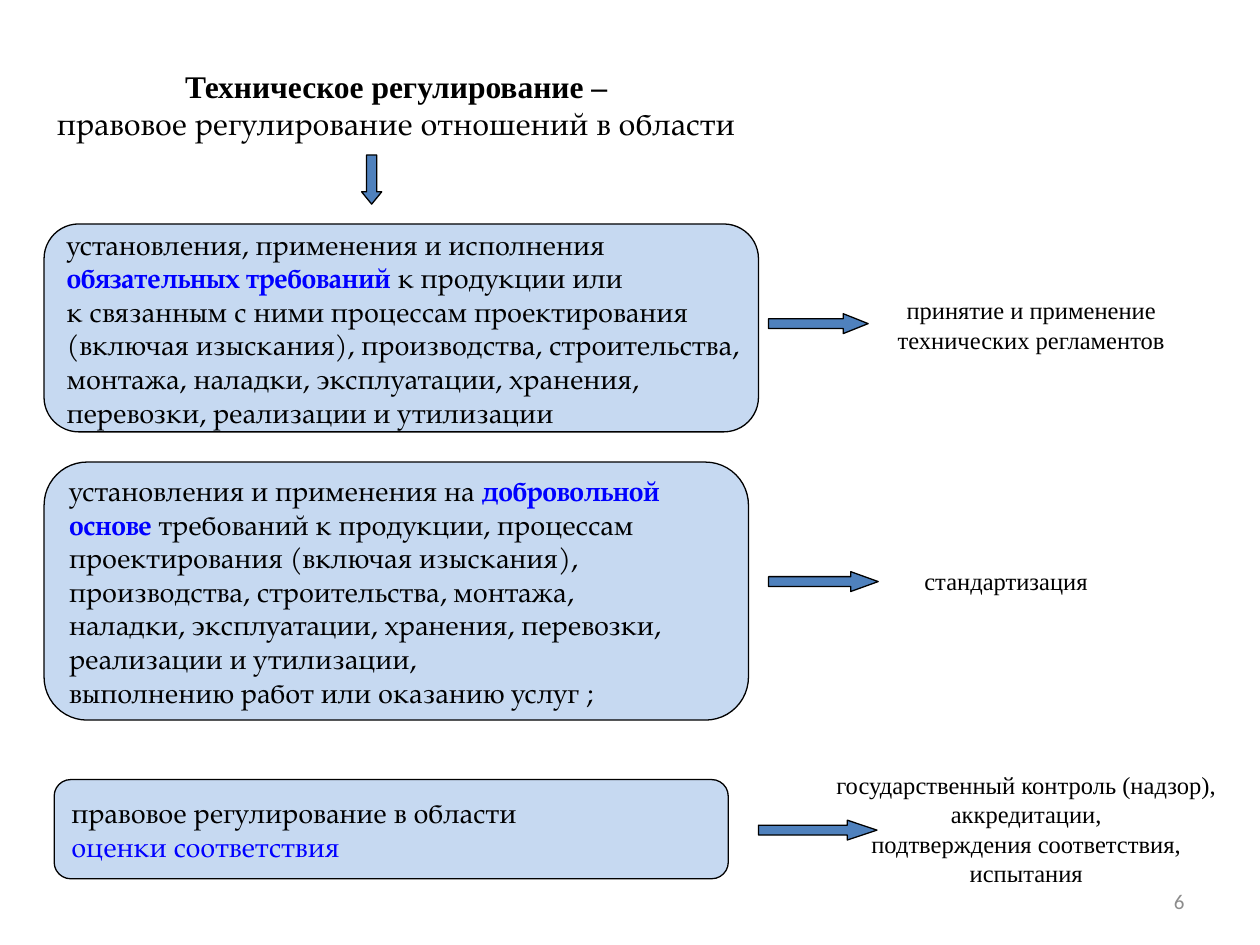
from pptx import Presentation
from pptx.dml.color import RGBColor
from pptx.enum.shapes import MSO_SHAPE as SHAPE
from pptx.enum.text import MSO_ANCHOR as ANCHOR, MSO_AUTO_SIZE as AUTO_SIZE, PP_ALIGN as ALIGN
from pptx.util import Inches, Pt

BLACK = RGBColor(0x00, 0x00, 0x00)
ACCENT = RGBColor(0x00, 0x00, 0xFF)
BOX_FILL = RGBColor(0xC6, 0xD9, 0xF1)
ARROW_FILL = RGBColor(0x4F, 0x81, 0xBD)
GREY = RGBColor(0x8C, 0x8C, 0x8C)
SERIF = "Times New Roman"
BOOK = "TeX Gyre Pagella"
WIDTH, HEIGHT = Inches(10), Inches(7.5)

KEY = {"color": ACCENT, "bold": True}

# Each item: left, top, width, height as percentages of the slide, then content.
# A line is a string or a list of (text, format) runs.
BOXES = [
    ((3.5, 23.7, 56.7, 22), [
        "установления, применения и исполнения",
        [("обязательных требований", KEY), (" к продукции или", {})],
        "к связанным с ними процессам проектирования",
        "(включая изыскания), производства, строительства,",
        "монтажа, наладки, эксплуатации, хранения,",
        "перевозки, реализации и утилизации",
    ]),
    ((3.5, 48.9, 55.9, 27.3), [
        [("установления и применения на ", {}), ("добровольной", KEY)],
        [("основе", KEY), (" требований к продукции, процессам", {})],
        "проектирования (включая изыскания),",
        "производства, строительства, монтажа,",
        "наладки, эксплуатации, хранения, перевозки,",
        "реализации и утилизации,",
        "выполнению работ или оказанию услуг ;",
    ]),
    ((4.3, 82.5, 53.5, 10.5), [
        "правовое регулирование в области",
        [("оценки соответствия", {"color": ACCENT})],
    ]),
]
LABELS = [
    ((67.3, 29.1, 29.1, 10.5), ["принятие и применение", "технических регламентов"]),
    ((65.7, 57.3, 28.3, 8.4), ["стандартизация"]),
    ((65.7, 79.3, 31.5, 16.8), ["государственный контроль (надзор),", "аккредитации,",
                                "подтверждения соответствия,", "испытания"]),
]
ARROWS = [
    (SHAPE.DOWN_ARROW, (28.7, 16.4, 1.6, 5.2)),
    (SHAPE.RIGHT_ARROW, (61, 33.2, 7.9, 2.1)),
    (SHAPE.RIGHT_ARROW, (61, 60.5, 8.7, 2.1)),
    (SHAPE.RIGHT_ARROW, (60.2, 86.8, 9.4, 2.1)),
]


def share(area):
    """Turn percentages of the slide into left, top, width, height."""
    return [int(part * side / 100) for part, side in zip(area, (WIDTH, HEIGHT) * 2)]


def write(tf, lines, font=BOOK, size=16, align=ALIGN.JUSTIFY, color=BLACK, bold=False):
    tf.auto_size = AUTO_SIZE.NONE
    tf.word_wrap = False
    tf.vertical_anchor = ANCHOR.MIDDLE
    for i, line in enumerate(lines):
        p = tf.paragraphs[0] if i == 0 else tf.add_paragraph()
        p.alignment = align
        for text, own in [(line, {})] if isinstance(line, str) else line:
            style = {"font": font, "color": color, "bold": bold, **own}
            r = p.add_run()
            r.text = text
            r.font.name = style["font"]
            r.font.size = Pt(size)
            r.font.bold = style["bold"]
            r.font.color.rgb = style["color"]


def add_filled(slide, kind, area, fill):
    sp = slide.shapes.add_shape(kind, *share(area))
    sp.shadow.inherit = False
    sp.fill.solid()
    sp.fill.fore_color.rgb = fill
    sp.line.color.rgb = BLACK
    sp.line.width = Pt(0.75)
    return sp


def add_box(slide, area, lines):
    sp = add_filled(slide, SHAPE.ROUNDED_RECTANGLE, area, BOX_FILL)
    write(sp.text_frame, lines)


def add_arrow(slide, kind, area):
    """Add a block arrow whose head takes a quarter of its length."""
    sp = add_filled(slide, kind, area, ARROW_FILL)
    long, short = max(sp.width, sp.height), min(sp.width, sp.height)
    sp.adjustments[1] = long / 4 / short


def add_label(slide, area, lines, **style):
    sp = slide.shapes.add_textbox(*share(area))
    write(sp.text_frame, lines, **style)


def set_title(slide):
    title = slide.shapes.title
    title.left, title.top, title.width, title.height = share((2.7, 3.7, 57.5, 14.7))
    write(title.text_frame, [
        [("Техническое регулирование –", {"font": SERIF, "bold": True})],
        "правовое регулирование отношений в области",
    ], size=18, align=ALIGN.CENTER)


def main():
    prs = Presentation()
    prs.slide_width, prs.slide_height = WIDTH, HEIGHT
    slide = prs.slides.add_slide(prs.slide_layouts.get_by_name("Title Only"))
    set_title(slide)
    for area, lines in BOXES:
        add_box(slide, area, lines)
    for kind, area in ARROWS:
        add_arrow(slide, kind, area)
    for area, lines in LABELS:
        add_label(slide, area, lines, font=SERIF, size=14, align=ALIGN.CENTER)
    add_label(slide, (71.7, 92.7, 23.3, 5.3), ["6"],
              font="Calibri", size=12, align=ALIGN.RIGHT, color=GREY)
    prs.save("out.pptx")


if __name__ == "__main__":
    main()
